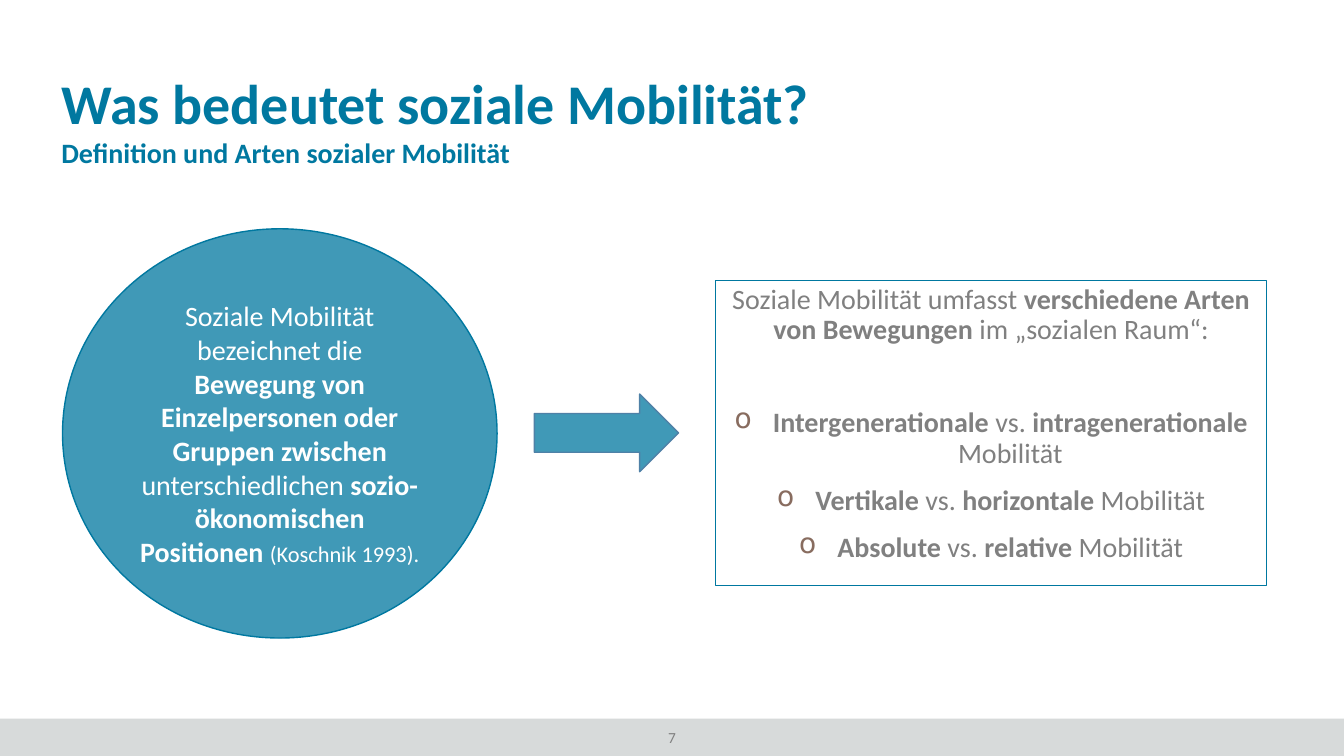
from lxml import etree
from pptx import Presentation
from pptx.dml.color import RGBColor
from pptx.enum import shapes, text
from pptx.oxml import ns
from pptx.util import Inches, Pt

BLUE, GREY, WHITE = "0078A0", "808080", "FFFFFF"
DEFINITION = [
    ("Soziale Mobilität bezeichnet die ", False, 20),
    ("Bewegung von Einzelpersonen oder Gruppen zwischen ", True, 20),
    ("unterschiedlichen ", False, 20),
    ("sozio-ökonomischen Positionen ", True, 20),
    ("(Koschnik 1993).", False, 16),
]
INTRODUCTION = [
    ("Soziale Mobilität umfasst ", False, 20),
    ("verschiedene Arten von Bewegungen ", True, 20),
    ("im „sozialen Raum“:", False, 20),
]
KINDS = [
    ("Intergenerationale", "intragenerationale"),
    ("Vertikale", "horizontale"),
    ("Absolute", "relative"),
]


def color(value):
    """Turn a hex string into a colour."""
    return RGBColor.from_string(value)


def add_runs(paragraph, parts, ink):
    """Add (wording, bold, size) parts to a paragraph as runs."""
    for wording, bold, size in parts:
        run = paragraph.add_run()
        run.text = wording
        run.font.name = "Calibri"
        run.font.size = Pt(size)
        run.font.bold = bold
        run.font.color.rgb = color(ink)


def add_figure(slide, kind, box, fill=None, line=None, width=1, alpha=None):
    """Add a preset shape with the given fill, outline and opacity."""
    shape = slide.shapes.add_shape(kind, *map(Inches, box))
    shape.shadow.inherit = False
    if fill:
        shape.fill.solid()
        shape.fill.fore_color.rgb = color(fill)
    else:
        shape.fill.background()
    if alpha:
        fill_color = shape.fill._xPr.find(".//" + ns.qn("a:srgbClr"))
        etree.SubElement(fill_color, ns.qn("a:alpha"), val=str(alpha * 1000))
    if line:
        shape.line.color.rgb = color(line)
        shape.line.width = Pt(width)
    else:
        shape.line.fill.background()
    return shape


def add_bullet(paragraph):
    """Give a paragraph a hanging brown bullet."""
    properties = paragraph._p.get_or_add_pPr()
    properties.set("marL", str(Inches(0.38)))
    properties.set("indent", str(-Inches(0.38)))
    bullet_color = etree.SubElement(properties, ns.qn("a:buClr"))
    etree.SubElement(bullet_color, ns.qn("a:srgbClr"), val="886C5F")
    etree.SubElement(properties, ns.qn("a:buChar"), char="o")


def add_heading(slide, left, top, width):
    """Place the title and the subtitle below it."""
    title = slide.shapes.title
    title_height = 0.67
    title.left, title.top = Inches(left), Inches(top)
    title.width, title.height = Inches(width), Inches(title_height)
    subtitle = slide.shapes.add_textbox(
        Inches(left), Inches(top + title_height), Inches(width), Inches(0.42))
    for shape, wording, size in (
            (title, "Was bedeutet soziale Mobilität?", 40),
            (subtitle, "Definition und Arten sozialer Mobilität", 20)):
        frame = shape.text_frame
        frame.word_wrap = True
        frame.auto_size = text.MSO_AUTO_SIZE.NONE
        frame.vertical_anchor = text.MSO_ANCHOR.TOP
        paragraph = frame.paragraphs[0]
        paragraph.alignment = text.PP_ALIGN.LEFT
        paragraph.line_spacing = 0.9
        add_runs(paragraph, [(wording, True, size)], BLUE)
    title.text_frame.margin_top = title.text_frame.margin_bottom = Inches(0.1)


def add_definition(slide, box):
    """Place the circle that holds the definition."""
    circle = add_figure(slide, shapes.MSO_SHAPE.OVAL, box, BLUE, BLUE, alpha=75)
    circle.text_frame.vertical_anchor = text.MSO_ANCHOR.MIDDLE
    paragraph = circle.text_frame.paragraphs[0]
    paragraph.alignment = text.PP_ALIGN.CENTER
    add_runs(paragraph, DEFINITION, WHITE)


def add_kinds(slide, box):
    """Place the framed list of kinds of mobility."""
    panel = add_figure(slide, shapes.MSO_SHAPE.RECTANGLE, box, line=BLUE, width=0.75)
    frame = panel.text_frame
    frame.vertical_anchor = text.MSO_ANCHOR.TOP
    introduction = frame.paragraphs[0]
    introduction.alignment = text.PP_ALIGN.CENTER
    introduction.line_spacing = 0.9
    introduction.space_after = Pt(39)
    add_runs(introduction, INTRODUCTION, GREY)
    for first, second in KINDS:
        paragraph = frame.add_paragraph()
        paragraph.alignment = text.PP_ALIGN.CENTER
        paragraph.line_spacing = 0.9
        paragraph.space_before = paragraph.space_after = Pt(6)
        add_bullet(paragraph)
        add_runs(paragraph, [(first, True, 20), (" vs. ", False, 20),
                             (second, True, 20), (" Mobilität", False, 20)], GREY)


def add_footer(slide, box):
    """Place the footer band and the centred page number."""
    left, top, width, height = box
    add_figure(slide, shapes.MSO_SHAPE.RECTANGLE, box, "D7DADA")
    number_width = 1.2
    number = slide.shapes.add_textbox(
        Inches(left + (width - number_width) / 2), Inches(top + 0.04),
        Inches(number_width), Inches(0.29))
    number.text_frame.word_wrap = True
    paragraph = number.text_frame.paragraphs[0]
    paragraph.alignment = text.PP_ALIGN.CENTER
    add_runs(paragraph, [("7", False, 11)], GREY)


def main():
    """Build the slide and save it."""
    presentation = Presentation()
    presentation.slide_width = Inches(13.33)
    presentation.slide_height = Inches(7.5)
    slide = presentation.slides.add_slide(presentation.slide_layouts[5])
    add_footer(slide, (0, 7.13, 13.33, 0.37))
    add_heading(slide, 0.51, 0.66, 12.31)
    add_definition(slide, (0.62, 2.27, 4.31, 4.06))
    add_kinds(slide, (7.1, 2.78, 5.46, 3.03))
    add_figure(slide, shapes.MSO_SHAPE.RIGHT_ARROW, (5.3, 3.91, 1.43, 0.77),
               BLUE, "4F81A7", alpha=75)
    presentation.save("out.pptx")


if __name__ == "__main__":
    main()
